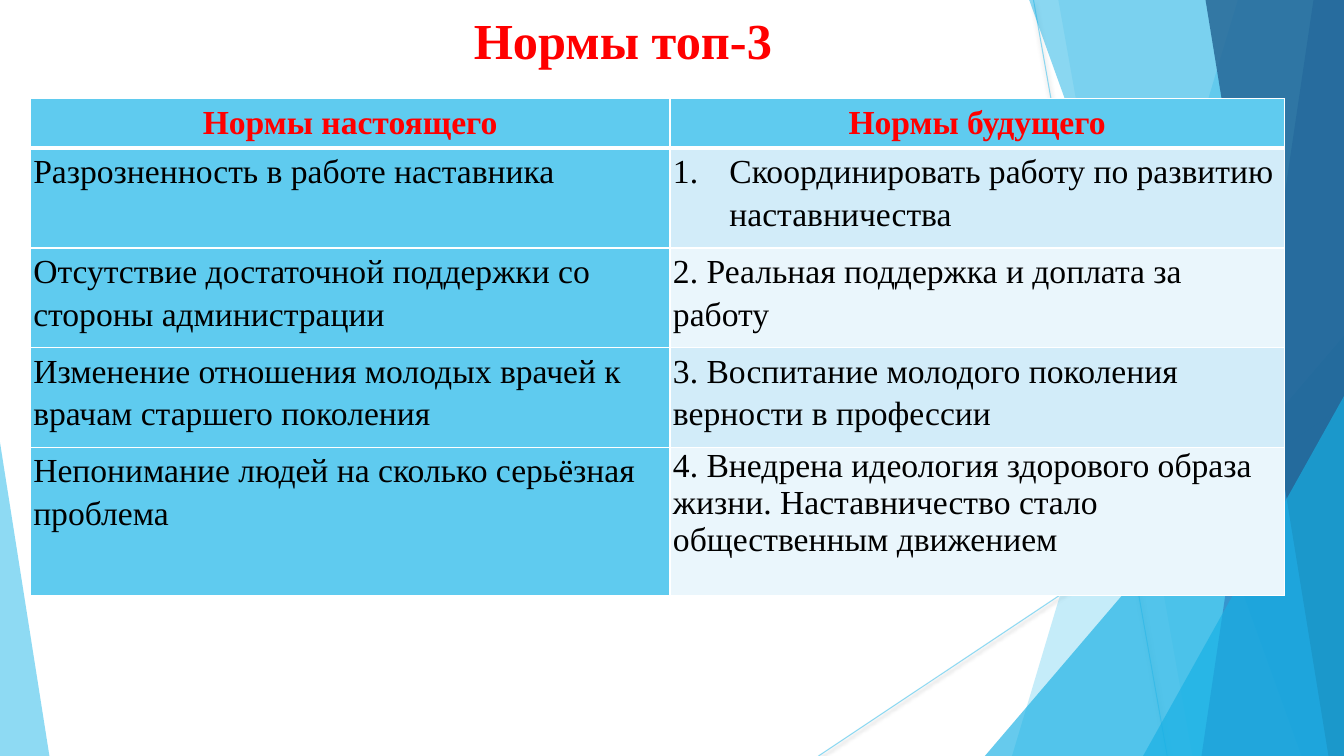
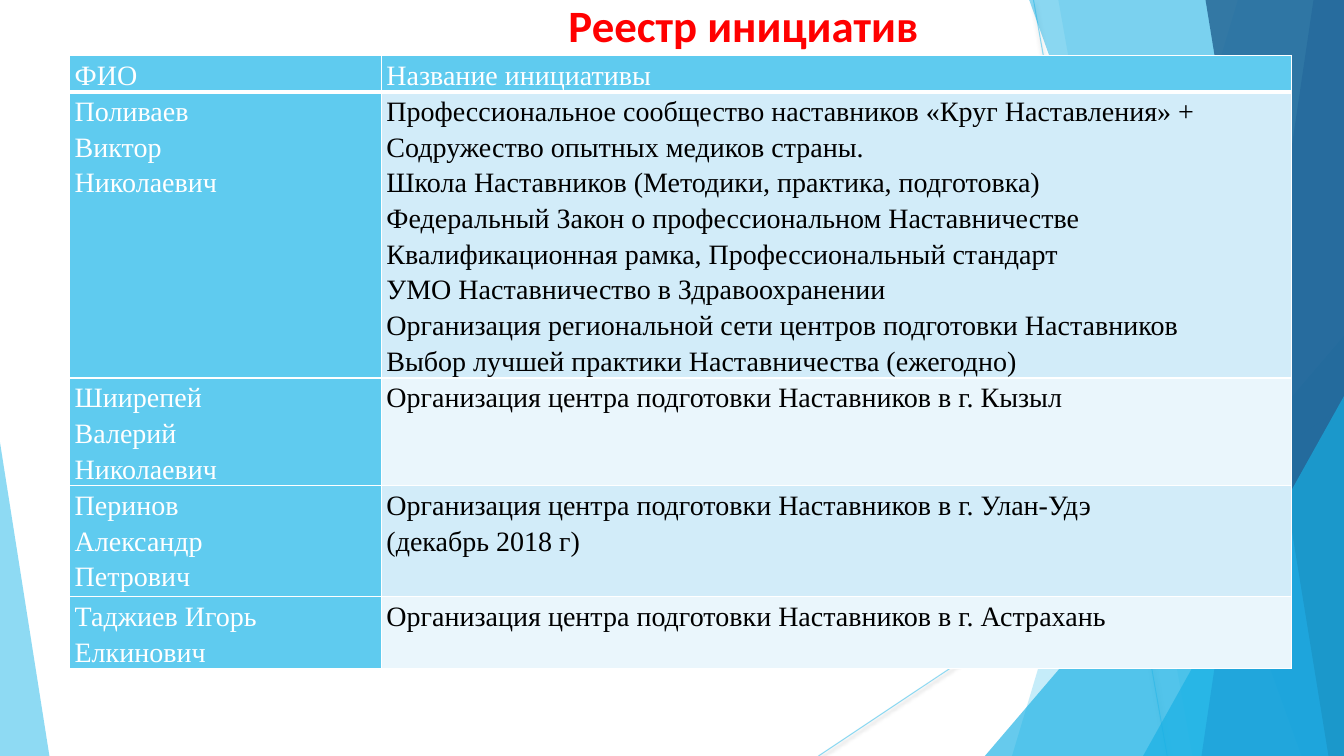
from dataclasses import dataclass

from lxml import etree
from pptx import Presentation
from pptx.dml import color
from pptx.enum import shapes, text
from pptx.oxml import ns, parse_xml
from pptx.util import Emu, Inches, Pt

WIDTH, HEIGHT = Inches(13.333), Inches(7.5)
SERIF, SANS = "Times New Roman", "Calibri"
COLORS = {
    "sky": "5FCBEF",
    "azure": "17B0E4",
    "blue": "2E83C3",
    "navy": "226292",
    "band_dark": "D2ECF9",
    "band_light": "EAF6FC",
    "red": "FF0000",
    "black": "000000",
    "white": "FFFFFF",
}


@dataclass(frozen=True)
class Ray:
    start: tuple[float, float]
    end: tuple[float, float]


@dataclass(frozen=True)
class Slab:
    top_x: float
    bottom_x: float
    fill: str
    opacity: int


@dataclass(frozen=True)
class Wedge:
    left: float
    top: float
    right: float
    apex: float
    fill: str
    opacity: int


@dataclass(frozen=True)
class TextStyle:
    font: str
    size: int
    color: str
    bold: bool = False


@dataclass(frozen=True)
class Title:
    wording: str
    left: float
    top: float
    width: float
    height: float
    anchor: text.MSO_ANCHOR
    style: TextStyle


@dataclass(frozen=True)
class Cell:
    paragraphs: tuple[str, ...]
    numbered: bool = False
    line_spacing: float = 1.15


@dataclass(frozen=True)
class Grid:
    left: float
    top: float
    columns: tuple[float, ...]
    rows: tuple[float, ...]
    inset: float
    header: TextStyle
    label: TextStyle
    body: TextStyle
    header_align: text.PP_ALIGN
    cells: tuple[tuple[Cell, ...], ...]


RAYS = (Ray((76.9, 0), (86.85, 100)), Ray((100, 53.7), (60.9, 100)))
FACETS = (
    Slab(92.1, 75.3, "sky", 36),
    Slab(78.75, 88.73, "sky", 20),
    Wedge(73.28, 44.4, 100, 1, "azure", 66),
    Slab(76.58, 96.83, "azure", 50),
    Slab(97.73, 89.4, "blue", 70),
    Slab(89.7, 98.85, "navy", 80),
    Wedge(85.05, 52.4, 100, 1, "azure", 66),
    Wedge(0, 58.5, 3.68, 0, "sky", 70),
)


def across(percent: float) -> Emu:
    return Emu(round(WIDTH * percent / 100))


def down(percent: float) -> Emu:
    return Emu(round(HEIGHT * percent / 100))


def rgb(name: str) -> color.RGBColor:
    return color.RGBColor.from_string(COLORS[name])


def set_opacity(fill_parent, percent: int) -> None:
    solid = fill_parent.find(ns.qn("a:solidFill"))
    etree.SubElement(solid[0], ns.qn("a:alpha"), val=str(percent * 1000))


def paint(shape, fill: str, opacity: int) -> None:
    shape.shadow.inherit = False
    shape.fill.solid()
    shape.fill.fore_color.rgb = rgb(fill)
    set_opacity(shape._element.spPr, opacity)
    shape.line.fill.background()


def draw_ray(slide, ray: Ray) -> None:
    connector = slide.shapes.add_connector(
        shapes.MSO_CONNECTOR.STRAIGHT,
        across(ray.start[0]), down(ray.start[1]),
        across(ray.end[0]), down(ray.end[1]),
    )
    connector.line.width = Pt(0.75)
    connector.line.color.rgb = rgb("sky")
    properties = connector._element.spPr
    set_opacity(properties.find(ns.qn("a:ln")), 70)
    properties.append(parse_xml(
        f'<a:effectLst {ns.nsdecls("a")}>'
        f'<a:outerShdw blurRad="{Pt(3.1)}" dist="{Pt(1.6)}" dir="5400000" rotWithShape="0">'
        f'<a:srgbClr val="{COLORS["black"]}"><a:alpha val="38000"/></a:srgbClr>'
        '</a:outerShdw></a:effectLst>'
    ))


def draw_slab(slide, slab: Slab) -> None:
    builder = slide.shapes.build_freeform(across(slab.top_x), 0)
    builder.add_line_segments(
        [(WIDTH, 0), (WIDTH, HEIGHT), (across(slab.bottom_x), HEIGHT)], close=True
    )
    paint(builder.convert_to_shape(), slab.fill, slab.opacity)


def draw_wedge(slide, wedge: Wedge) -> None:
    shape = slide.shapes.add_shape(
        shapes.MSO_SHAPE.ISOSCELES_TRIANGLE,
        across(wedge.left), down(wedge.top),
        across(wedge.right - wedge.left), down(100 - wedge.top),
    )
    shape.adjustments[0] = wedge.apex
    paint(shape, wedge.fill, wedge.opacity)


def draw_backdrop(slide) -> None:
    for ray in RAYS:
        draw_ray(slide, ray)
    for facet in FACETS:
        if isinstance(facet, Slab):
            draw_slab(slide, facet)
        else:
            draw_wedge(slide, facet)


def add_run(paragraph, wording: str, style: TextStyle) -> None:
    run = paragraph.add_run()
    run.text = wording
    run.font.name = style.font
    run.font.size = Pt(style.size)
    run.font.bold = style.bold
    run.font.color.rgb = rgb(style.color)


def draw_title(slide, title: Title) -> None:
    box = slide.shapes.add_textbox(
        across(title.left), down(title.top), across(title.width), down(title.height)
    )
    frame = box.text_frame
    frame.word_wrap = True
    frame.vertical_anchor = title.anchor
    paragraph = frame.paragraphs[0]
    paragraph.alignment = text.PP_ALIGN.CENTER
    add_run(paragraph, title.wording, title.style)


def number_paragraph(paragraph) -> None:
    properties = paragraph._p.get_or_add_pPr()
    properties.set("marL", str(Inches(0.56)))
    properties.set("indent", str(-Inches(0.56)))
    etree.SubElement(properties, ns.qn("a:buFont"), typeface="+mj-lt")
    etree.SubElement(properties, ns.qn("a:buAutoNum"), type="arabicPeriod")


def set_borders(table_cell, row: int) -> None:
    properties = table_cell._tc.get_or_add_tcPr()
    widths = {"L": 1, "R": 1, "T": 3 if row == 1 else 1, "B": 3 if row == 0 else 1}
    for index, (side, width) in enumerate(widths.items()):
        properties.insert(index, parse_xml(
            f'<a:ln{side} {ns.nsdecls("a")} w="{Pt(width)}"><a:solidFill>'
            f'<a:srgbClr val="{COLORS["white"]}"/></a:solidFill></a:ln{side}>'
        ))


def fill_cell(table_cell, cell: Cell, grid: Grid, row: int, column: int) -> None:
    if row == 0:
        style, fill = grid.header, "sky"
    elif column == 0:
        style, fill = grid.label, "sky"
    else:
        style, fill = grid.body, "band_dark" if row % 2 else "band_light"
    table_cell.fill.solid()
    table_cell.fill.fore_color.rgb = rgb(fill)
    set_borders(table_cell, row)
    table_cell.margin_left = table_cell.margin_right = Inches(grid.inset)
    table_cell.margin_top = table_cell.margin_bottom = 0
    frame = table_cell.text_frame
    for index, wording in enumerate(cell.paragraphs):
        paragraph = frame.add_paragraph() if index else frame.paragraphs[0]
        paragraph.alignment = text.PP_ALIGN.LEFT if row else grid.header_align
        paragraph.line_spacing = cell.line_spacing
        if cell.numbered:
            number_paragraph(paragraph)
        add_run(paragraph, wording, style)


def draw_grid(slide, grid: Grid) -> None:
    table = slide.shapes.add_table(
        len(grid.rows), len(grid.columns),
        across(grid.left), down(grid.top),
        across(sum(grid.columns)), down(sum(grid.rows)),
    ).table
    table.horz_banding = False
    for column, share in zip(table.columns, grid.columns):
        column.width = across(share)
    for row, share in zip(table.rows, grid.rows):
        row.height = down(share)
    for row, cells in enumerate(grid.cells):
        for column, cell in enumerate(cells):
            fill_cell(table.cell(row, column), cell, grid, row, column)


NORMS_TEXT = TextStyle(SERIF, 24, "black")
NORMS = Grid(
    2.25, 13.07, (47.6, 45.7), (6.53, 13.2, 13.2, 13.2, 19.6), 0.03,
    TextStyle(SERIF, 24, "red", True), NORMS_TEXT, NORMS_TEXT, text.PP_ALIGN.CENTER,
    (
        (Cell(("Нормы настоящего",)), Cell(("Нормы будущего",))),
        (Cell(("Разрозненность в работе наставника",)),
         Cell(("Скоординировать работу по развитию наставничества",), numbered=True)),
        (Cell(("Отсутствие достаточной поддержки со стороны администрации",)),
         Cell(("2. Реальная поддержка и доплата за работу",))),
        (Cell(("Изменение отношения молодых врачей к врачам старшего поколения",)),
         Cell(("3. Воспитание молодого поколения верности в профессии",))),
        (Cell(("Непонимание людей на сколько серьёзная проблема",)),
         Cell(("4. Внедрена идеология здорового образа жизни. Наставничество стало "
               "общественным движением",), line_spacing=1.0)),
    ),
)

REGISTER_LABEL = TextStyle(SERIF, 20, "white")
CENTER = "Организация центра подготовки Наставников в г. "
REGISTER = Grid(
    5.18, 7.33, (23.2, 67.7), (4.8, 37.87, 14.27, 14.67, 9.47), 0.05,
    REGISTER_LABEL, REGISTER_LABEL, TextStyle(SERIF, 20, "black"), text.PP_ALIGN.LEFT,
    (
        (Cell(("ФИО",)), Cell(("Название инициативы",))),
        (Cell(("Поливаев", "Виктор", "Николаевич")),
         Cell((
             "Профессиональное сообщество наставников «Круг Наставления» + "
             "Содружество опытных медиков страны.",
             "Школа Наставников (Методики, практика, подготовка)",
             "Федеральный Закон о профессиональном Наставничестве",
             "Квалификационная рамка, Профессиональный стандарт",
             "УМО Наставничество в Здравоохранении",
             "Организация региональной сети центров подготовки Наставников",
             "Выбор лучшей практики Наставничества (ежегодно)",
         ))),
        (Cell(("Шиирепей", "Валерий", "Николаевич")), Cell((CENTER + "Кызыл",))),
        (Cell(("Перинов", "Александр", "Петрович")),
         Cell((CENTER + "Улан-Удэ", "(декабрь 2018 г)"))),
        (Cell(("Таджиев Игорь Елкинович",)), Cell((CENTER + "Астрахань",))),
    ),
)

PAGES = (
    (Title("Нормы топ-3", 11.1, 0.4, 70.5, 9.47, text.MSO_ANCHOR.BOTTOM,
           TextStyle(SERIF, 36, "red", True)), NORMS),
    (Title("Реестр инициатив", 10.65, -1.07, 89.35, 8.53, text.MSO_ANCHOR.MIDDLE,
           TextStyle(SANS, 32, "red", True)), REGISTER),
)


def main() -> None:
    presentation = Presentation()
    presentation.slide_width, presentation.slide_height = WIDTH, HEIGHT
    for title, grid in PAGES:
        slide = presentation.slides.add_slide(presentation.slide_layouts[6])
        draw_backdrop(slide)
        draw_grid(slide, grid)
        draw_title(slide, title)
    presentation.save("out.pptx")


if __name__ == "__main__":
    main()
